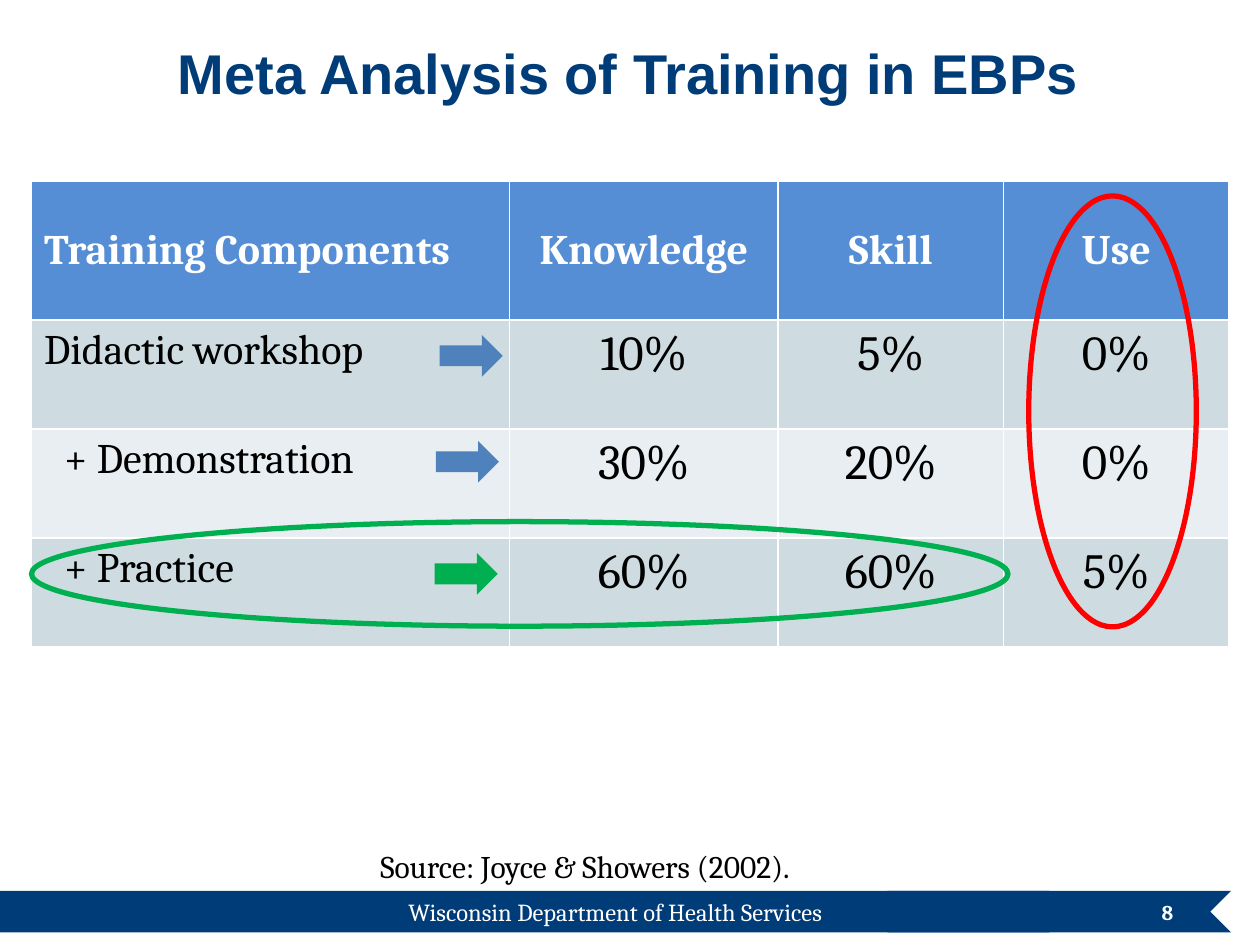
from lxml.etree import SubElement
from pptx import Presentation
from pptx.dml.color import RGBColor
from pptx.enum.shapes import MSO_SHAPE as Shape
from pptx.enum.text import MSO_ANCHOR as Anchor, PP_ALIGN as Align
from pptx.oxml import parse_xml
from pptx.oxml.ns import nsdecls
from pptx.util import Inches, Pt

deck = Presentation()
deck.slide_width, deck.slide_height = Inches(10), Inches(7.5)
slide = deck.slides.add_slide(deck.slide_layouts[5])
shapes = slide.shapes
unit = deck.slide_width / 100
NAVY, BLUE, GREEN, RED, WHITE, BLACK = "003D78", "4F81BD", "00B050", "FF0000", "FFFFFF", "000000"


def grid(*units):
    return [round(n * unit) for n in units]


def write(frame, text, size, color, align=Align.LEFT, bold=False, font="Cambria"):
    frame.text = text
    frame.word_wrap = True
    paragraph = frame.paragraphs[0]
    paragraph.alignment = align
    paragraph.font.name, paragraph.font.size, paragraph.font.bold = font, Pt(size), bold
    paragraph.font.color.rgb = RGBColor.from_string(color)


footer_top, footer_height = 70.7, 3.3
for kind, left, width, turn in [(Shape.CHEVRON, 68.8, 28.9, 180), (Shape.RECTANGLE, 0, 83.3, 0)]:
    band = shapes.add_shape(kind, *grid(left, footer_top, width, footer_height))
    band.rotation = turn
    band.shadow.inherit = False
    band.fill.solid()
    band.fill.fore_color.rgb = RGBColor.from_string(NAVY)
    band.line.fill.background()

department = shapes.add_textbox(*grid(0, footer_top, 97.7, 3.4))
write(department.text_frame, "Wisconsin Department of Health Services", 14, WHITE, Align.CENTER)
page = shapes.add_textbox(*grid(70.8, 70.4, 23.3, 4))
write(page.text_frame, "8", 12, WHITE, Align.RIGHT, True)
page.text_frame.vertical_anchor = Anchor.MIDDLE

heading = shapes.title
heading.left, heading.top, heading.width, heading.height = grid(4.9, 0, 90, 11.4)
write(heading.text_frame, "Meta Analysis of Training in EBPs", 32, NAVY, Align.CENTER, True, "Arial")
heading.text_frame.vertical_anchor = Anchor.MIDDLE

results = [
    ["Training Components", "Knowledge", "Skill", "Use"],
    ["Didactic workshop", "10%", "5%", "0%"],
    ["+ Demonstration", "30%", "20%", "0%"],
    ["+ Practice", "60%", "60%", "5%"],
]
column_widths = grid(37.95, 21.3, 17.9, 17.9)
row_heights = grid(11, 8.65, 8.65, 8.65)
row_fills = ["558ED5", "CEDCE1", "E8EEF1", "CEDCE1"]
table = shapes.add_table(4, 4, *grid(2.5, 14.4, 95.05, 36.95)).table
for column, width in zip(table.columns, column_widths):
    column.width = width
for r, (row, values) in enumerate(zip(table.rows, results)):
    row.height = row_heights[r]
    header = r == 0
    for c, value in enumerate(values):
        cell = row.cells[c]
        write(cell.text_frame, value, 24 if header or c == 0 else 28, WHITE if header else BLACK,
              Align.CENTER if c else Align.LEFT, header)
        cell.vertical_anchor = Anchor.MIDDLE if header else Anchor.TOP
        if value.startswith("+"):
            cell.margin_left = Inches(0.26)
        properties = cell._tc.get_or_add_tcPr()
        for side in ("lnL", "lnR", "lnT", "lnB"):
            border = parse_xml(f'<a:{side} {nsdecls("a")} w="12700"><a:solidFill/></a:{side}>')
            SubElement(border[0], border[0].tag.replace("solidFill", "srgbClr"), val=WHITE)
            properties.append(border)
        cell.fill.solid()
        cell.fill.fore_color.rgb = RGBColor.from_string(row_fills[r])

source = shapes.add_textbox(*grid(29.2, 66.7, 44.2, 4))
write(source.text_frame, "Source: Joyce & Showers (2002).", 18, BLACK)

for color, *place in [(RED, 81.65, 15.55, 13.3, 34.2), (GREEN, 2.5, 41.4, 77.5, 8.3)]:
    ring = shapes.add_shape(Shape.OVAL, *grid(*place))
    ring.shadow.inherit = False
    ring.fill.background()
    ring.line.color.rgb = RGBColor.from_string(color)
    ring.line.width = Pt(3)

for color, left, top in [(BLUE, 34.9, 26.6), (BLUE, 34.6, 35), (GREEN, 34.5, 43.9)]:
    arrow = shapes.add_shape(Shape.RIGHT_ARROW, *grid(left, top, 5, 3.3))
    arrow.shadow.inherit = False
    arrow.fill.solid()
    arrow.fill.fore_color.rgb = RGBColor.from_string(color)
    arrow.line.fill.background()

deck.save("out.pptx")
